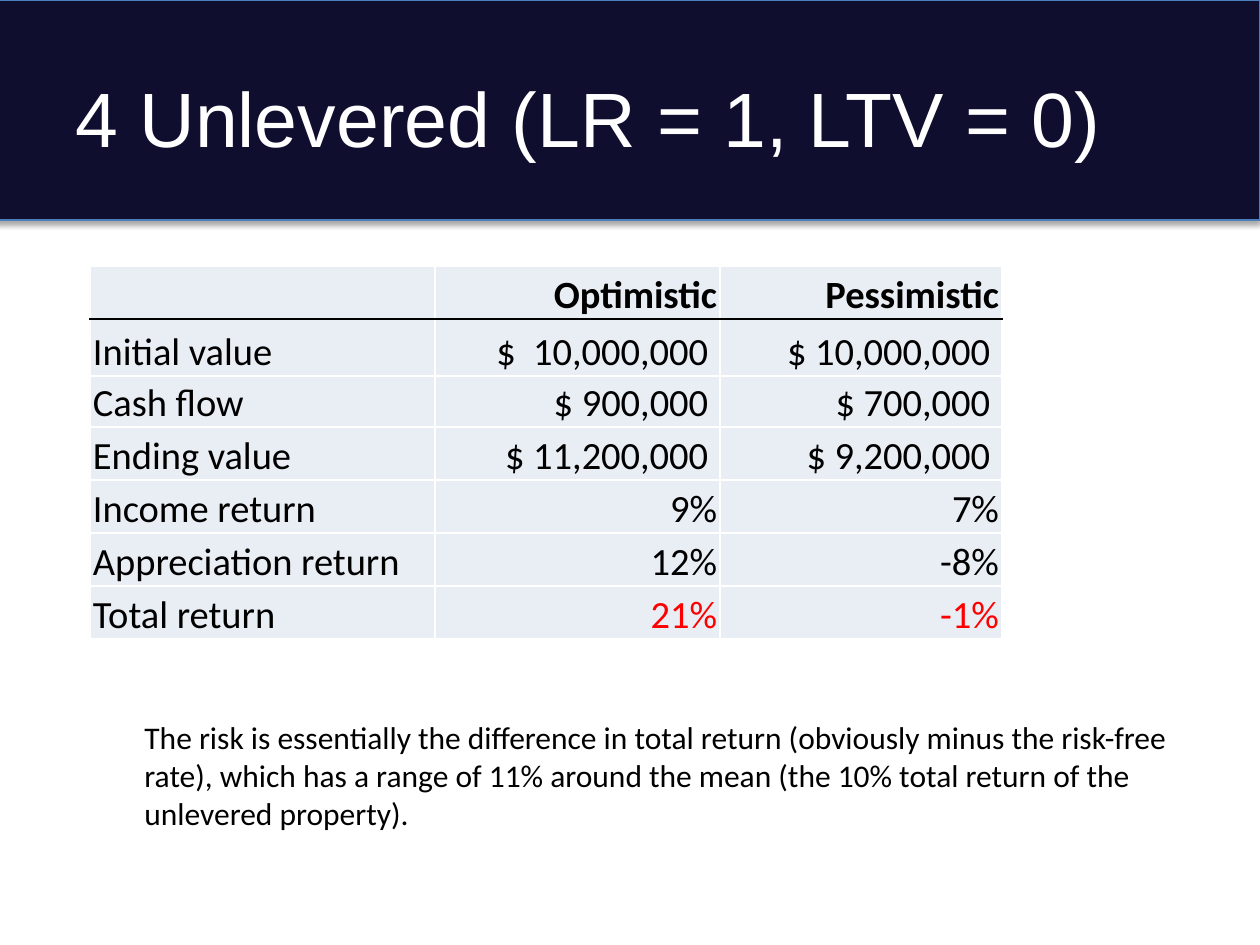
from lxml import etree
from pptx import Presentation
from pptx.dml.color import RGBColor
from pptx.enum.shapes import MSO_SHAPE
from pptx.enum.text import MSO_ANCHOR, PP_ALIGN
from pptx.oxml import parse_xml
from pptx.oxml.ns import nsdecls
from pptx.util import Pt

RECTANGLE = MSO_SHAPE.RECTANGLE
MIDDLE, BOTTOM = MSO_ANCHOR.MIDDLE, MSO_ANCHOR.BOTTOM
LEFT, RIGHT = PP_ALIGN.LEFT, PP_ALIGN.RIGHT
EMU_PER_PX = 914400 / 126


def px(*lengths):
    """Turn pixel lengths into a list of EMU values."""
    return [round(length * EMU_PER_PX) for length in lengths]


def style(paragraph, font_name, size, color, bold=False):
    font = paragraph.font
    font.name, font.size, font.bold = font_name, Pt(size), bold
    font.color.rgb = RGBColor.from_string(color)


prs = Presentation()
prs.slide_width, prs.slide_height = px(1260, 945)
slide = prs.slides.add_slide(prs.slide_layouts[6])

# Title band with a soft shadow below
band = slide.shapes.add_shape(RECTANGLE, *px(-5, 0, 1265, 220))
band.fill.solid()
band.fill.fore_color.rgb = RGBColor.from_string("100E2F")
band.line.color.rgb = RGBColor.from_string("4B7EBC")
band.line.width = Pt(0.75)
band.shadow.inherit = False
band.element.spPr.append(parse_xml(
    f'<a:effectLst {nsdecls("a")}>'
    f'<a:outerShdw blurRad="{Pt(3.1)}" dist="{Pt(1.8)}" dir="5400000" rotWithShape="0">'
    '<a:srgbClr val="000000"><a:alpha val="35000"/></a:srgbClr>'
    '</a:outerShdw></a:effectLst>'))
band.element.spPr.remove(band.element.spPr.findall("{*}effectLst")[0])

title = slide.shapes.add_textbox(*px(63, 38, 1134, 157)).text_frame
title.word_wrap = True
title.vertical_anchor = MIDDLE
title.text = "4 Unlevered (LR = 1, LTV = 0)"
style(title.paragraphs[0], "Arial", 44, "FFFFFF")

# Returns table
returns = [
    ("", "Optimistic", "Pessimistic"),
    ("Initial value", " $  10,000,000 ", " $ 10,000,000 "),
    ("Cash flow", " $ 900,000 ", " $ 700,000 "),
    ("Ending value", " $ 11,200,000 ", " $ 9,200,000 "),
    ("Income return", "9%", "7%"),
    ("Appreciation return", "12%", "-8%"),
    ("Total return", "21%", "-1%"),
]
column_widths = px(345, 285, 282)
row_heights = px(53, 57, 51, 53, 53, 53, 53)
total_row = len(returns) - 1

table = slide.shapes.add_table(
    len(returns), len(column_widths), *px(90, 266),
    sum(column_widths), sum(row_heights)).table
table.first_row = table.horz_banding = False
for column, width in zip(table.columns, column_widths):
    column.width = width
for row, height in zip(table.rows, row_heights):
    row.height = height

for r, values in enumerate(returns):
    # The header rule is shared by the first two rows
    edges = {"lnL": "FFFFFF", "lnR": "FFFFFF",
             "lnT": "000000" if r == 1 else "FFFFFF",
             "lnB": "000000" if r == 0 else "FFFFFF"}
    for c, value in enumerate(values):
        cell = table.cell(r, c)
        cell.margin_left, cell.margin_right, cell.margin_top, cell.margin_bottom = px(3, 3, 3, 0)
        cell.vertical_anchor = BOTTOM
        cell.text = value
        paragraph = cell.text_frame.paragraphs[0]
        paragraph.alignment = RIGHT if c else LEFT
        color = "FF0000" if r == total_row and c else "000000"
        style(paragraph, "Calibri", 22, color, bold=r == 0)
        properties = cell._tc.get_or_add_tcPr()
        for edge, edge_color in edges.items():
            properties.append(etree.fromstring(
                f'<a:{edge} {nsdecls("a")} w="{Pt(1)}"><a:solidFill>'
                f'<a:srgbClr val="{edge_color}"/></a:solidFill></a:{edge}>'))
        cell.fill.solid()
        cell.fill.fore_color.rgb = RGBColor.from_string("E9EDF4")

# Reading of the result
risk_note = slide.shapes.add_textbox(*px(132, 712, 1065, 127)).text_frame
risk_note.word_wrap = True
risk_note.text = (
    "The risk is essentially the difference in total return (obviously minus the "
    "risk-free rate), which has a range of 11% around the mean (the 10% total "
    "return of the unlevered property).")
style(risk_note.paragraphs[0], "Calibri", 18, "000000")

prs.save("out.pptx")
